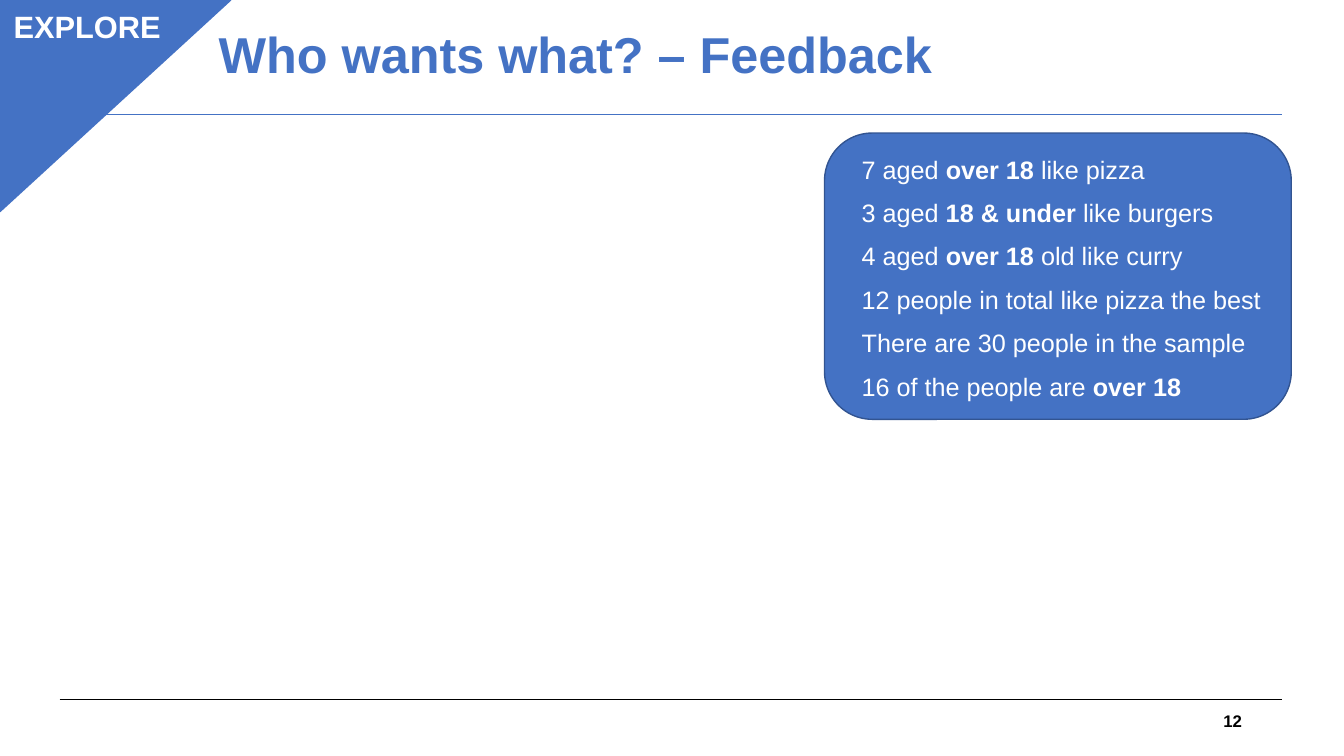
from dataclasses import dataclass

from lxml.etree import SubElement
from pptx import Presentation
from pptx.dml.color import RGBColor
from pptx.enum.shapes import MSO_CONNECTOR, MSO_SHAPE
from pptx.enum.text import MSO_ANCHOR, PP_ALIGN
from pptx.oxml.ns import qn
from pptx.shapes.autoshape import Shape
from pptx.shapes.shapetree import GroupShapes, SlideShapes
from pptx.text.text import TextFrame
from pptx.util import Inches, Length, Pt

SLIDE_WIDTH, SLIDE_HEIGHT = Inches(13.333), Inches(7.5)
FONT = "Arial"
BLUE = RGBColor(0x44, 0x72, 0xC4)
DARK_BLUE = RGBColor(0x32, 0x54, 0x91)
WHITE = RGBColor(0xFF, 0xFF, 0xFF)
BLACK = RGBColor(0x00, 0x00, 0x00)

Shapes = SlideShapes | GroupShapes


def across(share: float) -> Length:
    """Percentage of the slide's width."""
    return Length(round(SLIDE_WIDTH * share / 100))


def down(share: float) -> Length:
    """Percentage of the slide's height."""
    return Length(round(SLIDE_HEIGHT * share / 100))


@dataclass(frozen=True)
class Area:
    """A rectangle in percent of the slide's width and height."""
    left: float
    top: float
    width: float
    height: float

    def lengths(self) -> tuple[Length, Length, Length, Length]:
        return (across(self.left), down(self.top),
                across(self.width), down(self.height))


@dataclass(frozen=True)
class Style:
    size: float
    color: RGBColor
    bold: bool = False
    align: PP_ALIGN = PP_ALIGN.LEFT
    anchor: MSO_ANCHOR = MSO_ANCHOR.MIDDLE
    line_spacing: float | Length = 1.0
    space_after: float = 0


@dataclass(frozen=True)
class Piece:
    text: str
    bold: bool = False


@dataclass(frozen=True)
class Rule:
    height: float
    color: RGBColor


RULE_LEFT, RULE_RIGHT = 4.43, 95.4
RULES = [Rule(92.53, BLACK), Rule(15.2, BLUE)]

TITLE = Style(36, BLUE, bold=True, line_spacing=0.9)
PAGE_NUMBER = Style(12, BLACK, bold=True, align=PP_ALIGN.RIGHT)
STAGE = Style(22, WHITE, bold=True, align=PP_ALIGN.CENTER)
FACT = Style(18, WHITE, anchor=MSO_ANCHOR.TOP, line_spacing=Pt(25), space_after=6)

FACTS = [
    [Piece("7 aged "), Piece("over 18 ", True), Piece("like pizza")],
    [Piece("3 aged"), Piece(" 18 & under ", True), Piece("like burgers")],
    [Piece("4 aged "), Piece("over 18 ", True), Piece("old like curry")],
    [Piece("12 people in total like pizza the best")],
    [Piece("There are 30 people in the sample")],
    [Piece("16 of the people are "), Piece("over 18", True)],
]


def write(frame: TextFrame, lines: list[list[Piece]], style: Style) -> None:
    frame.word_wrap = True
    frame.vertical_anchor = style.anchor
    for index, pieces in enumerate(lines):
        paragraph = frame.add_paragraph() if index else frame.paragraphs[0]
        paragraph.alignment = style.align
        paragraph.line_spacing = style.line_spacing
        paragraph.space_after = Pt(style.space_after)
        for piece in pieces:
            run = paragraph.add_run()
            run.text = piece.text
            run.font.name = FONT
            run.font.size = Pt(style.size)
            run.font.bold = style.bold or piece.bold
            run.font.color.rgb = style.color


def add_text(shapes: Shapes, area: Area, lines: list[list[Piece]], style: Style) -> None:
    write(shapes.add_textbox(*area.lengths()).text_frame, lines, style)


def add_panel(shapes: Shapes, kind: MSO_SHAPE, area: Area,
              outline: RGBColor, outline_width: float) -> Shape:
    panel = shapes.add_shape(kind, *area.lengths())
    panel.shadow.inherit = False
    panel.fill.solid()
    panel.fill.fore_color.rgb = BLUE
    panel.line.color.rgb = outline
    panel.line.width = Pt(outline_width)
    return panel


def add_rule(shapes: Shapes, rule: Rule) -> None:
    line = shapes.add_connector(MSO_CONNECTOR.STRAIGHT,
                                across(RULE_LEFT), down(rule.height),
                                across(RULE_RIGHT), down(rule.height))
    line.line.color.rgb = rule.color
    line.line.width = Pt(0.75)
    SubElement(line.element.spPr, qn("a:effectLst"))


def add_corner(shapes: Shapes) -> None:
    """Fill the slide's top left corner with a triangle."""
    corner = add_panel(shapes, MSO_SHAPE.ISOSCELES_TRIANGLE,
                       Area(0, 0, 17.18, 28), BLUE, 1)
    corner.adjustments[0] = 0
    corner.element.spPr.find(qn("a:xfrm")).set("flipV", "1")


def add_fact_card(shapes: SlideShapes) -> None:
    card = shapes.add_group_shape().shapes
    add_panel(card, MSO_SHAPE.ROUNDED_RECTANGLE,
              Area(61.35, 17.6, 34.73, 37.87), DARK_BLUE, 1)
    add_text(card, Area(63.38, 19.07, 32.7, 34.67), FACTS, FACT)


def main() -> None:
    presentation = Presentation()
    presentation.slide_width = SLIDE_WIDTH
    presentation.slide_height = SLIDE_HEIGHT
    shapes = presentation.slides.add_slide(presentation.slide_layouts[6]).shapes

    for rule in RULES:
        add_rule(shapes, rule)
    add_text(shapes, Area(15.53, 1.47, 56.78, 12.27),
             [[Piece("Who wants what? – Feedback")]], TITLE)
    add_text(shapes, Area(70.65, 92.67, 22.5, 5.33), [[Piece("12")]], PAGE_NUMBER)
    add_corner(shapes)
    add_fact_card(shapes)
    stage = add_panel(shapes, MSO_SHAPE.RECTANGLE,
                      Area(0, 0.27, 12.98, 6.27), BLUE, 0.75)
    write(stage.text_frame, [[Piece("EXPLORE")]], STAGE)

    presentation.save("out.pptx")


if __name__ == "__main__":
    main()
